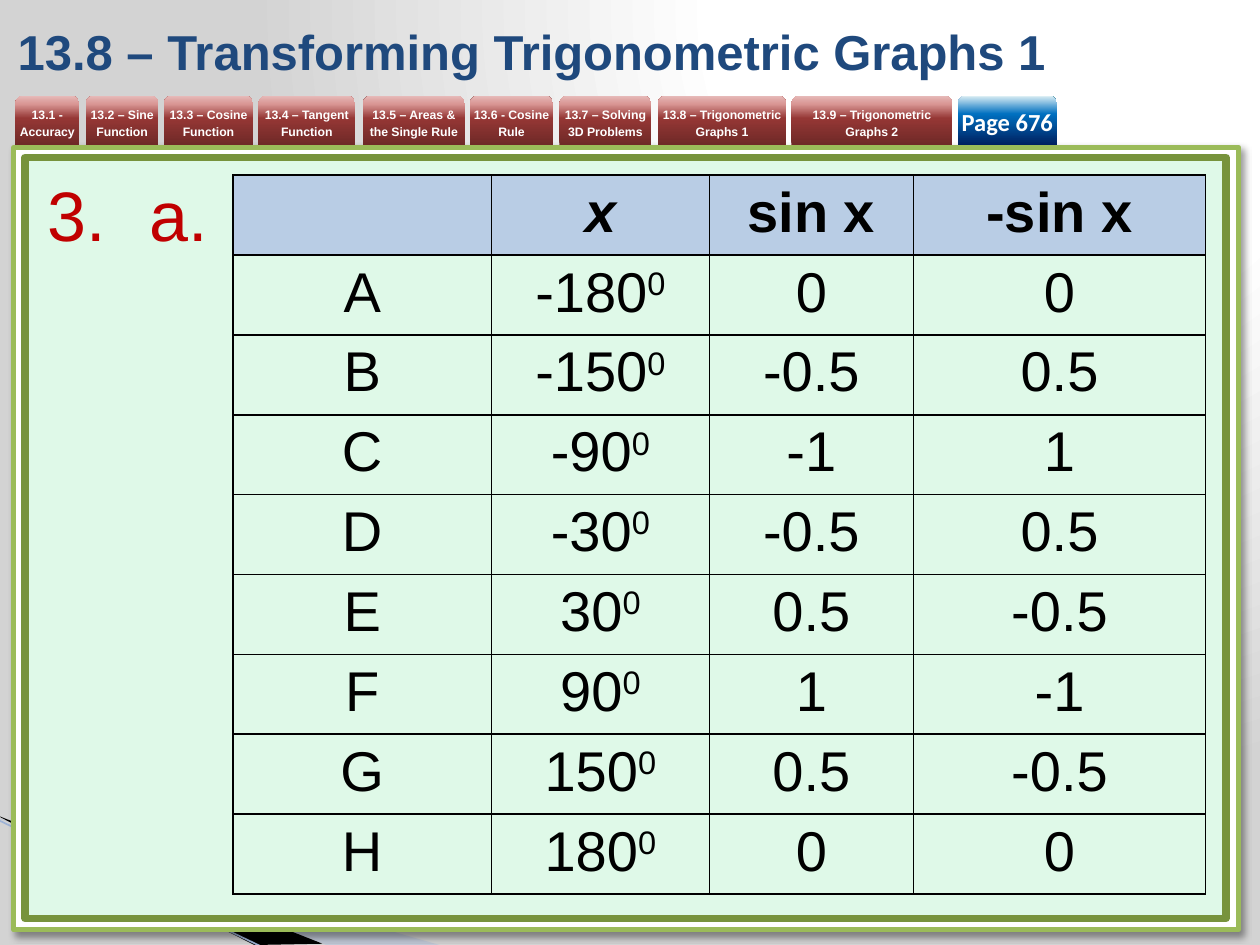
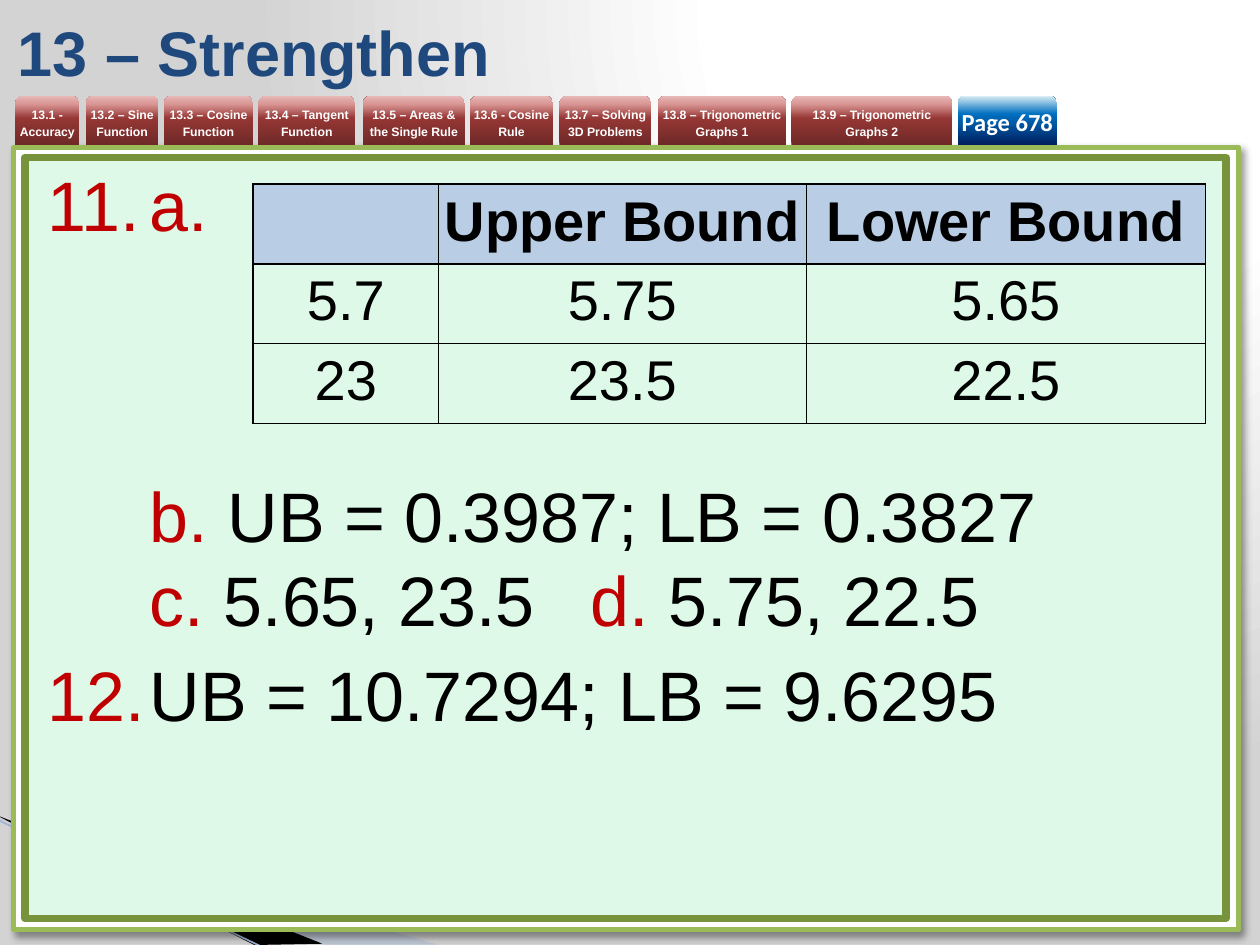
"""Build two maths answer slides that share one tabbed layout."""
import pptx
import pptx.util
import pptx.oxml
import pptx.oxml.ns
import pptx.dml.color
import pptx.enum.shapes
import pptx.enum.text
from lxml import etree

Inches, Pt = pptx.util.Inches, pptx.util.Pt
qn, nsdecls = pptx.oxml.ns.qn, pptx.oxml.ns.nsdecls
SHAPE = pptx.enum.shapes.MSO_SHAPE
ALIGN = pptx.enum.text.PP_ALIGN
ANCHOR = pptx.enum.text.MSO_ANCHOR
FIT = pptx.enum.text.MSO_AUTO_SIZE

COLORS = {
    "white": "FFFFFF", "black": "000000", "title": "1F497D", "answer": "C00000",
    "header": "B9CDE5", "frame": "9BBB59", "panel": "DFF9E8", "panel_line": "77933C",
    "wedge": "A7B9DB", "wedge_line": "9EB3D6",
}
GRADIENTS = {
    "background": [(0, "FFFFFF"), (40, "FFFFFF"), (100, "D3D3D3")],
    "topic": [(0, "6F2927"), (54, "953735"), (83, "D99694"), (100, "E6B9B8")],
    "page": [(0, "002060"), (63, "0070C0"), (100, "DBEEF4")],
}
UPWARD = '<a:lin ang="16200000" scaled="0"/>'
CORNER = '<a:path path="circle"><a:fillToRect l="65000" t="0" r="0" b="98000"/></a:path>'

TOPICS = [
    ("13.1 - Accuracy", 0.12, 0.51),
    ("13.2 – Sine Function", 0.68, 0.58),
    ("13.3 – Cosine Function", 1.3, 0.71),
    ("13.4 – Tangent Function", 2.05, 0.77),
    ("13.5 – Areas & the Single Rule", 2.88, 0.81),
    ("13.6 - Cosine Rule", 3.73, 0.66),
    ("13.7 – Solving 3D Problems", 4.44, 0.73),
    ("13.8 – Trigonometric Graphs 1", 5.22, 1.02),
    ("13.9 – Trigonometric Graphs 2", 6.28, 1.28),
]
WEDGES = [
    ("wedge", 40, [(-0.01, 6.5), (3.49, 7.5), (2.59, 7.5), (-0.01, 6.49)]),
    ("black", 100, [(0, 6.48), (2.56, 7.49), (2.02, 7.5), (0.01, 6.49)]),
]
PANELS = [
    ((0.11, 1.17, 9.72, 6.21), "white", "frame", 3),
    ((0.2, 1.25, 9.53, 6.04), "panel", "panel_line", 4.33),
]
TOPIC_FONT = {"size": Pt(7), "name": "Arial", "bold": True}
PAGE_FONT = {"size": Pt(14), "name": "Calibri", "bold": True}
BODY_FONT = {"size": Pt(40), "name": "Arial"}
ROW_HEIGHT = 0.63

SLIDES = [
    {
        "title": ("13.8 – Transforming Trigonometric Graphs 1", 28),
        "page": "Page 676",
        "body_at": (0.28, 1.31, 9.37, 0.77),
        "tabs": [1.5, 3.32, 5.81, 7.81],
        "body": [(3, 0, [("a.", "answer")])],
        "table_at": (1.85, 1.39),
        "cols": [2.05, 1.73, 1.62, 2.32],
        "italic": "x",
        "rows": [
            ("", "x", "sin x", "-sin x"),
            ("A", "-180^0", "0", "0"),
            ("B", "-150^0", "-0.5", "0.5"),
            ("C", "-90^0", "-1", "1"),
            ("D", "-30^0", "-0.5", "0.5"),
            ("E", "30^0", "0.5", "-0.5"),
            ("F", "90^0", "1", "-1"),
            ("G", "150^0", "0.5", "-0.5"),
            ("H", "180^0", "0", "0"),
        ],
    },
    {
        "title": ("13 – Strengthen", 36),
        "page": "Page 678",
        "body_at": (0.28, 1.23, 9.37, 4.7),
        "tabs": [1.43, 4.62, 7.81],
        "body": [
            (11, 0, [("a.", "answer")]),
            (None, 130, [("b. ", "answer"), ("UB = 0.3987; LB = 0.3827", "black")]),
            (None, 0, [("c. ", "answer"), ("5.65, 23.5\t", "black"),
                       ("d. ", "answer"), ("5.75, 22.5", "black")]),
            (12, 6, [("UB = 10.7294; LB = 9.6295", "black")]),
        ],
        "table_at": (2.01, 1.46),
        "cols": [1.47, 2.92, 3.17],
        "italic": None,
        "rows": [
            ("", "Upper Bound", "Lower Bound"),
            ("5.7", "5.75", "5.65"),
            ("23", "23.5", "22.5"),
        ],
    },
]


def rgb(name):
    return pptx.dml.color.RGBColor.from_string(COLORS[name])


def apply(obj, values):
    for key, value in values.items():
        setattr(obj, key, value)


def place(sp, box):
    apply(sp, dict(zip(("left", "top", "width", "height"), map(Inches, box))))


def add_run(p, text, font, color):
    r = p.add_run()
    r.text = text
    apply(r.font, font)
    r.font.color.rgb = rgb(color)
    return r


def set_gradient(parent, stops, direction):
    gs = "".join(f'<a:gs pos="{pos * 1000}"><a:srgbClr val="{color}"/></a:gs>'
                 for pos, color in stops)
    xml = f'<a:gradFill {nsdecls("a")} rotWithShape="1"><a:gsLst>{gs}</a:gsLst>{direction}</a:gradFill>'
    parent.replace(parent.find(qn("a:solidFill")), pptx.oxml.parse_xml(xml))


def fill_shape(sp, color, line=None, width=0):
    sp.shadow.inherit = False
    sp.fill.solid()
    sp.fill.fore_color.rgb = rgb(color)
    if line:
        sp.line.color.rgb = rgb(line)
        sp.line.width = Pt(width)
    else:
        sp.line.fill.background()


def add_tab(s, text, left, width, gradient, font, spacing=None):
    sp = s.shapes.add_shape(SHAPE.ROUND_2_SAME_RECTANGLE, *map(Inches, (left, 0.76, width, 0.39)))
    fill_shape(sp, "white")
    set_gradient(sp.element.spPr, GRADIENTS[gradient], UPWARD)
    tf = sp.text_frame
    apply(tf, {"word_wrap": True, "vertical_anchor": ANCHOR.MIDDLE, "margin_left": 0,
               "margin_right": 0, "margin_top": 0, "margin_bottom": 0})
    p = tf.paragraphs[0]
    apply(p, {"alignment": ALIGN.CENTER, "line_spacing": spacing})
    add_run(p, text, font, "white")


def add_frame(s):
    for color, alpha, points in WEDGES:
        corners = [(Inches(x), Inches(y)) for x, y in points]
        fb = s.shapes.build_freeform(*corners[0])
        fb.add_line_segments(corners[1:])
        sp = fb.convert_to_shape()
        fill_shape(sp, color)
        clr = sp.element.spPr.find(qn("a:solidFill"))[0]
        etree.SubElement(clr, qn("a:alpha"), val=str(alpha * 1000))
    line = s.shapes.add_connector(pptx.enum.shapes.MSO_CONNECTOR.STRAIGHT,
                                  *map(Inches, (-0.01, 6.51, 2.09, 7.52)))
    line.line.color.rgb = rgb("wedge_line")
    line.line.width = Pt(0.95)
    etree.SubElement(line.element.spPr, qn("a:effectLst"))
    panels = []
    for box, color, edge, width in PANELS:
        sp = s.shapes.add_shape(SHAPE.RECTANGLE, *map(Inches, box))
        fill_shape(sp, color, edge, width)
        panels.append(sp)
    shadow = etree.SubElement(panels[0].element.spPr.find(qn("a:effectLst")), qn("a:outerShdw"),
                              blurRad=str(Pt(4)), dist=str(Pt(3)), dir="2700000",
                              algn="tl", rotWithShape="0")
    clr = etree.SubElement(shadow, qn("a:srgbClr"), val=COLORS["black"])
    etree.SubElement(clr, qn("a:alpha"), val="40000")
    for text, left, width in TOPICS:
        add_tab(s, text, left, width, "topic", TOPIC_FONT, Pt(10))


def move_to_layout(s, layout):
    parts = [sp.element for sp in s.shapes if not sp.is_placeholder]
    for number, part in enumerate(parts, 20):
        part.xpath(".//p:cNvPr")[0].set("id", str(number))
        layout.shapes.element.append(part)


def set_background(layout):
    layout.background.fill.solid()
    bg = layout.element.find(".//" + qn("p:bgPr"))
    set_gradient(bg, GRADIENTS["background"], CORNER)


def fill_title(s, text, size):
    title = s.shapes.title
    place(title, (0.04, 0.05, 8.43, 0.71))
    tf = title.text_frame
    apply(tf, {"vertical_anchor": ANCHOR.MIDDLE, "auto_size": FIT.NONE, "word_wrap": True})
    p = tf.paragraphs[0]
    p.alignment = ALIGN.LEFT
    add_run(p, text, {"size": Pt(size), "name": "Arial", "bold": True}, "title")


def fill_body(s, data):
    body = s.placeholders[1]
    place(body, data["body_at"])
    tf = body.text_frame
    apply(tf, {"word_wrap": True, "auto_size": FIT.SHAPE_TO_FIT_TEXT})
    for i, (number, before, runs) in enumerate(data["body"]):
        p = tf.add_paragraph() if i else tf.paragraphs[0]
        p.space_before = Pt(before)
        pPr = p._p.get_or_add_pPr()
        indent = Inches(0.81)
        pPr.set("marL", str(indent))
        pPr.set("indent", str(-indent if number else 0))
        if number:
            clr = etree.SubElement(pPr, qn("a:buClr"))
            etree.SubElement(clr, qn("a:srgbClr"), val=COLORS["answer"])
            etree.SubElement(pPr, qn("a:buFont"), typeface="Arial")
            etree.SubElement(pPr, qn("a:buAutoNum"), type="arabicPeriod", startAt=str(number))
        else:
            etree.SubElement(pPr, qn("a:buNone"))
        tabs = etree.SubElement(pPr, qn("a:tabLst"))
        for stop in data["tabs"]:
            etree.SubElement(tabs, qn("a:tab"), pos=str(Inches(stop)), algn="l")
        for text, color in runs:
            add_run(p, text, BODY_FONT, color)


def add_borders(cell):
    tcPr = cell._tc.get_or_add_tcPr()
    for side in ("lnL", "lnR", "lnT", "lnB"):
        ln = etree.SubElement(tcPr, qn("a:" + side), w=str(Pt(1)))
        solid = etree.SubElement(ln, qn("a:solidFill"))
        etree.SubElement(solid, qn("a:srgbClr"), val=COLORS["black"])


def add_table(s, data):
    rows, cols = data["rows"], data["cols"]
    box = (*data["table_at"], sum(cols), ROW_HEIGHT * len(rows))
    table = s.shapes.add_table(len(rows), len(cols), *map(Inches, box)).table
    for column, width in zip(table.columns, cols):
        column.width = Inches(width)
    margins = dict.fromkeys(("margin_left", "margin_right", "margin_top", "margin_bottom"), Inches(0.05))
    for i, row in enumerate(rows):
        table.rows[i].height = Inches(ROW_HEIGHT)
        for j, text in enumerate(row):
            cell = table.cell(i, j)
            apply(cell, margins)
            add_borders(cell)
            if i == 0:
                cell.fill.solid()
                cell.fill.fore_color.rgb = rgb("header")
            else:
                cell.fill.background()
            p = cell.text_frame.paragraphs[0]
            p.alignment = ALIGN.CENTER
            font = {"size": Pt(32), "name": "Arial", "bold": i == 0,
                    "italic": text == data["italic"]}
            base, _, power = text.partition("^")
            if base:
                add_run(p, base, font, "black")
            if power:
                r = add_run(p, power, font, "black")
                r.font._element.set("baseline", "30000")


def main():
    prs = pptx.Presentation()
    prs.slide_width, prs.slide_height = Inches(10), Inches(7.5)
    layout = prs.slide_layouts[1]
    set_background(layout)
    for i, data in enumerate(SLIDES):
        s = prs.slides.add_slide(layout)
        if i == 0:
            add_frame(s)
            move_to_layout(s, layout)
        fill_title(s, *data["title"])
        add_tab(s, data["page"], 7.6, 0.79, "page", PAGE_FONT)
        fill_body(s, data)
        add_table(s, data)
    prs.save("out.pptx")


if __name__ == "__main__":
    main()
